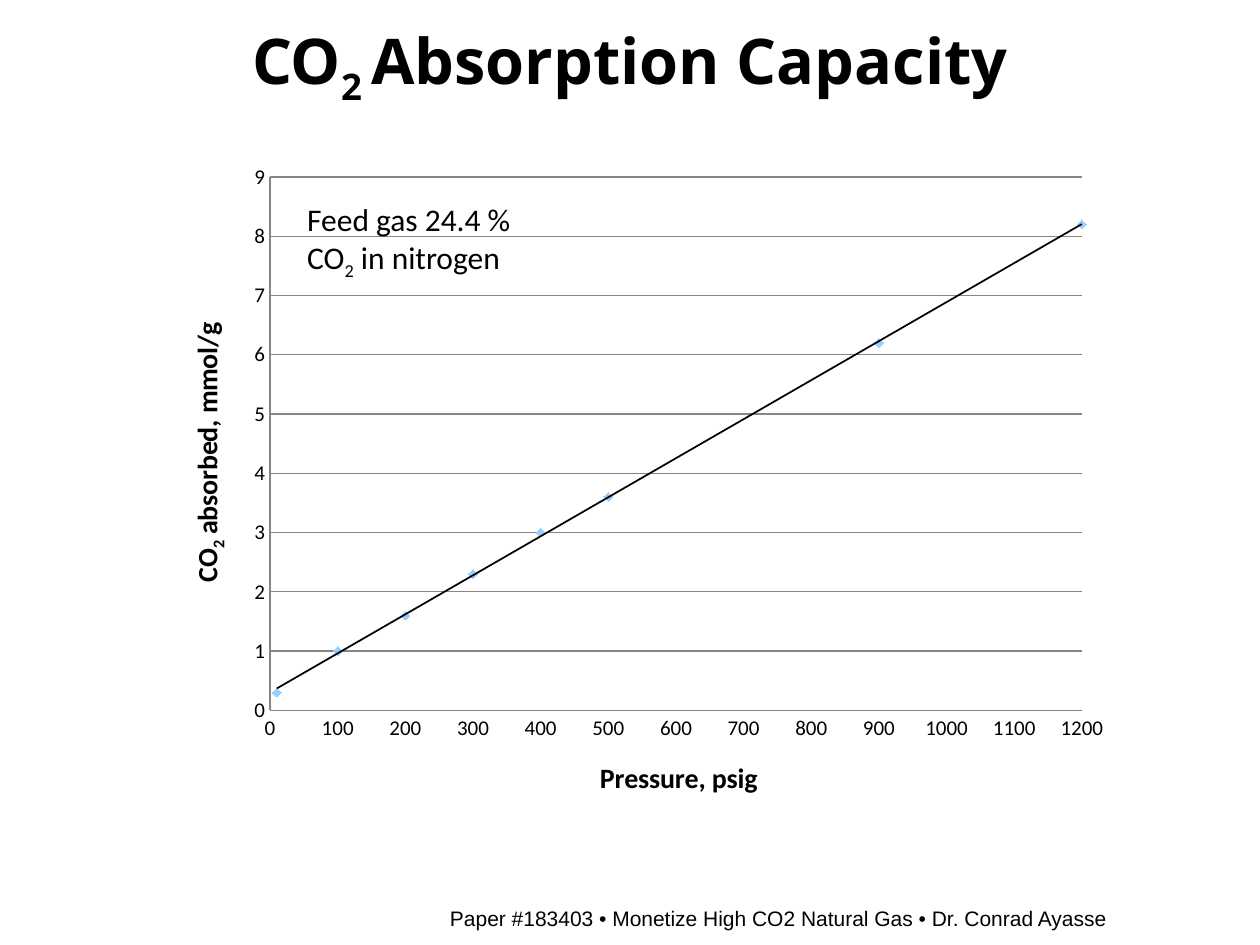
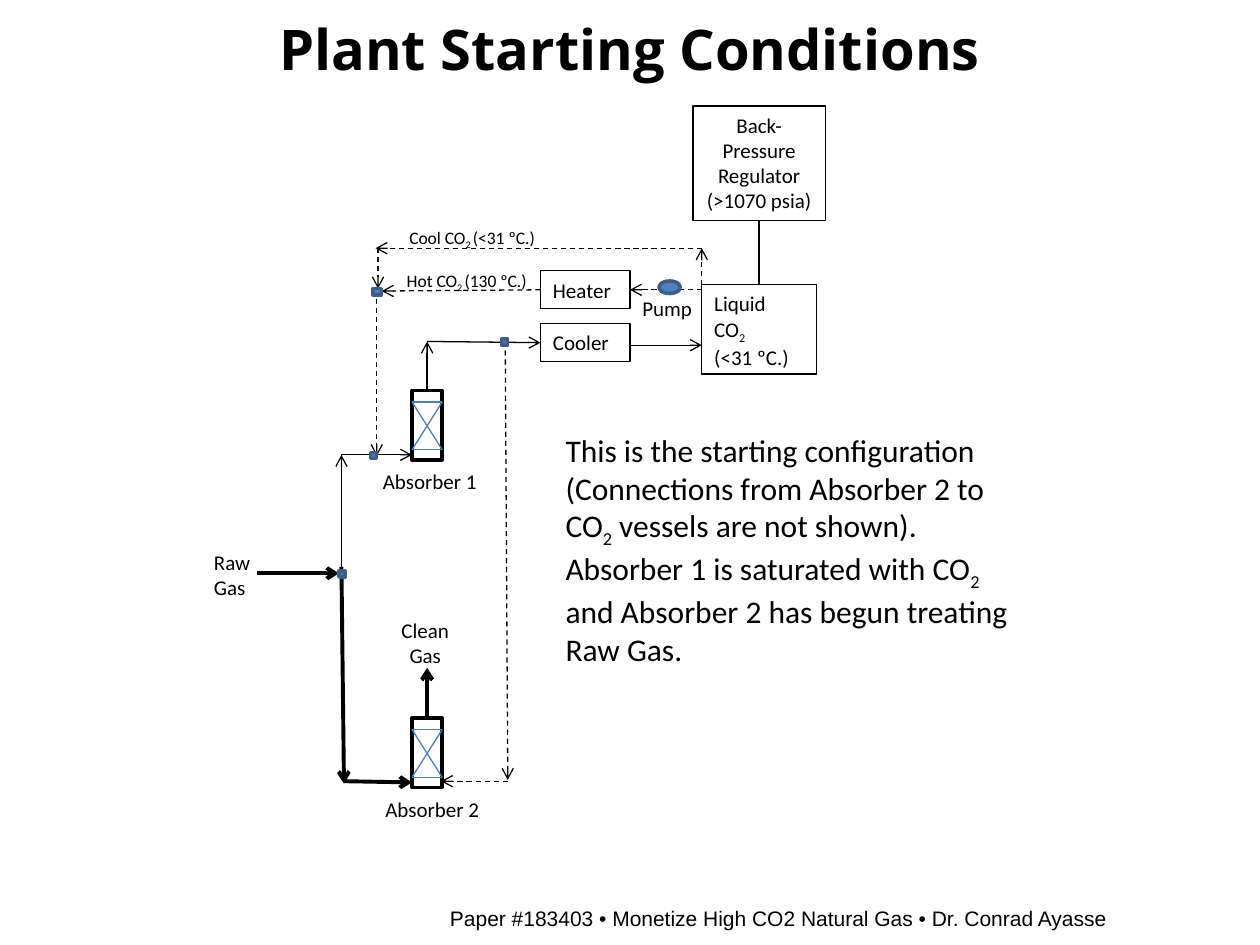
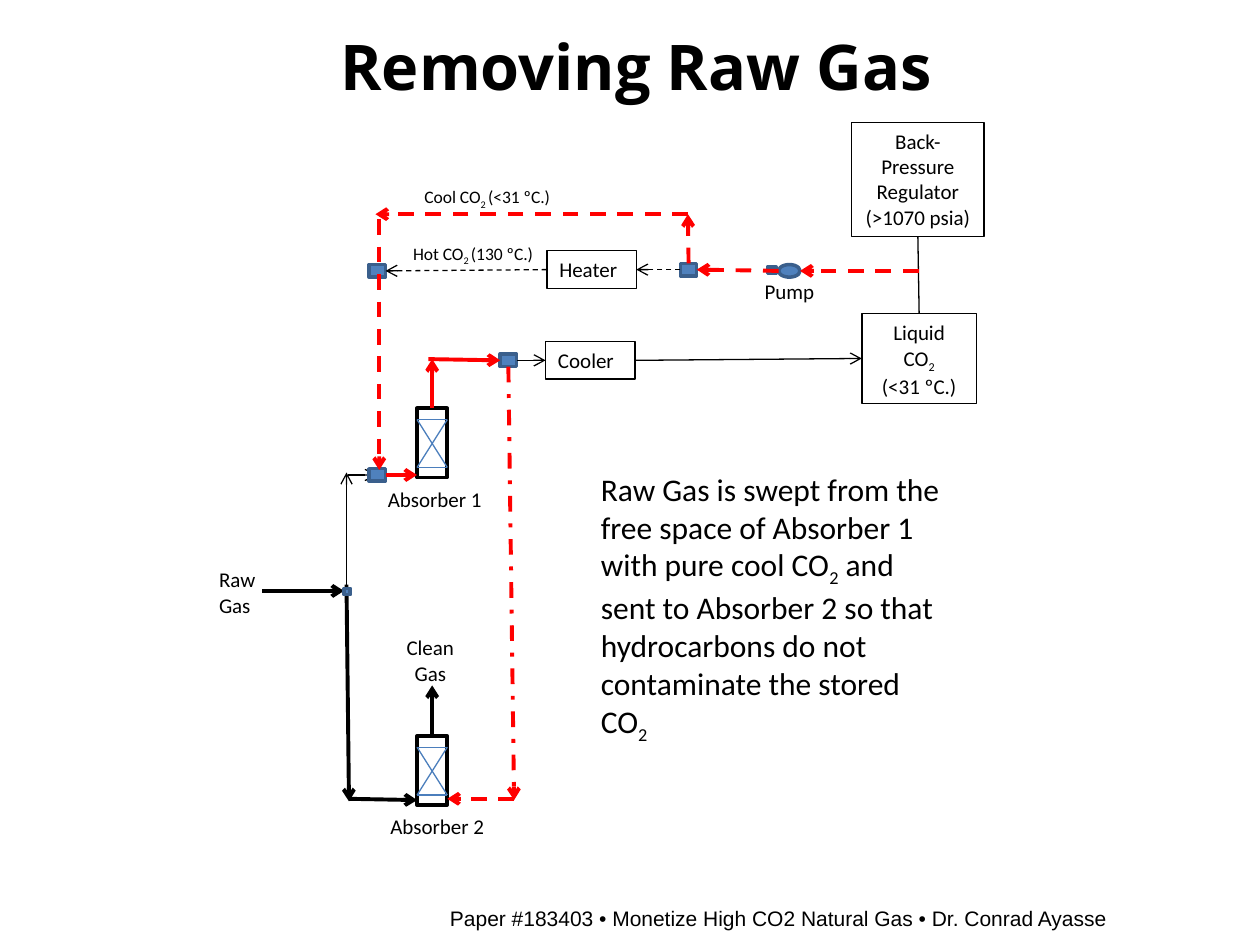
from dataclasses import dataclass

from pptx import Presentation
from pptx import util as u
from pptx.chart.data import XyChartData
from pptx.dml.color import RGBColor
from pptx.enum import chart as charts, dml, shapes, text
from pptx.oxml import parse_xml
from pptx.oxml.ns import nsdecls, qn

TOP, LEFT, BOTTOM, RIGHT = range(4)
LEFT_ALIGN, CENTER = text.PP_ALIGN.LEFT, text.PP_ALIGN.CENTER
DASH, DASH_DOT = dml.MSO_LINE.DASH, dml.MSO_LINE.DASH_DOT
RECT, OVAL = shapes.MSO_SHAPE.RECTANGLE, shapes.MSO_SHAPE.OVAL


@dataclass(frozen=True)
class Theme:
    ink: str = "000000"
    flow: str = "FF0000"
    packing: str = "4B7EBC"
    valve: str = "4F81BD"
    valve_edge: str = "3A5F8C"
    marker: str = "99CCFF"
    grid: str = "868686"
    head_font: str = "Open Sans"
    body_font: str = "Calibri"
    foot_font: str = "Arial"
    title: int = 36
    long_title: int = 32
    body: int = 18
    axis_title: int = 16
    label: int = 12
    small: int = 10
    thin: float = 0.75
    frame: float = 2
    thick: float = 2.25


THEME = Theme()
FOOTER = "Paper #183403 • Monetize High CO2 Natural Gas • Dr. Conrad Ayasse"


def color(code):
    return RGBColor.from_string(code)


class Sheet:
    """Holds the style and the current slide."""

    def __init__(self, deck, theme):
        self.deck, self.theme, self.page = deck, theme, None

    def new_page(self, title, size=None, at=(0, 0.16, 10, 0.71)):
        self.page = self.deck.slides.add_slide(self.deck.slide_layouts[6])
        self.label(FOOTER, (2.47, 7.14, 7.42, 0.25), align=CENTER,
                   font=self.theme.foot_font)
        box = self.label(title, at, size or self.theme.title, CENTER,
                         self.theme.head_font, bold=True)
        box.text_frame.vertical_anchor = text.MSO_ANCHOR.MIDDLE

    def set_text(self, frame, words, size=None, align=LEFT_ALIGN, font=None, bold=False):
        """Fill a frame; parts between tildes are subscripts."""
        for number, row in enumerate(words.split("\n")):
            para = frame.add_paragraph() if number else frame.paragraphs[0]
            para.alignment = align
            for index, part in enumerate(row.split("~")):
                if not part:
                    continue
                span = para.add_run()
                span.text = part
                span.font.size = u.Pt(size or self.theme.label)
                span.font.name = font or self.theme.body_font
                span.font.bold = bold
                span.font.color.rgb = color(self.theme.ink)
                if index % 2:
                    span._r.get_or_add_rPr().set("baseline", "-25000")

    def label(self, words, at, size=None, align=LEFT_ALIGN, font=None, bold=False):
        box = self.page.shapes.add_textbox(*map(u.Inches, at))
        box.text_frame.word_wrap = True
        self.set_text(box.text_frame, words, size, align, font, bold)
        return box

    def box(self, at, words="", align=LEFT_ALIGN, kind=RECT, fill=None,
            edge=None, width=None):
        shape = self.page.shapes.add_shape(kind, *map(u.Inches, at))
        shape.shadow.inherit = False
        if fill:
            shape.fill.solid()
            shape.fill.fore_color.rgb = color(fill)
        else:
            shape.fill.background()
        shape.line.color.rgb = color(edge or self.theme.ink)
        shape.line.width = u.Pt(width or self.theme.thin)
        if words:
            shape.text_frame.word_wrap = True
            shape.text_frame.vertical_anchor = text.MSO_ANCHOR.TOP
            self.set_text(shape.text_frame, words, align=align)
        return shape

    def valve(self, x, y, w=0.05, h=0.05, kind=RECT):
        return self.box((x, y, w, h), kind=kind, fill=self.theme.valve,
                        edge=self.theme.valve_edge, width=self.theme.frame)

    def line(self, start, end, ink=None, width=None, dash=None, arrow=True):
        """Draw a line; an end is a point or a pair (shape, side)."""
        joined = [not isinstance(tip[0], (int, float)) for tip in (start, end)]
        points = [(0, 0) if join else tip for join, tip in zip(joined, (start, end))]
        line = self.page.shapes.add_connector(
            shapes.MSO_CONNECTOR.STRAIGHT,
            *[u.Inches(value) for point in points for value in point])
        if joined[0]:
            line.begin_connect(*start)
        if joined[1]:
            line.end_connect(*end)
        line.line.color.rgb = color(ink or self.theme.ink)
        line.line.width = u.Pt(width or self.theme.thin)
        if dash:
            line.line.dash_style = dash
        if arrow:
            line.line._get_or_add_ln().append(
                parse_xml(f'<a:tailEnd {nsdecls("a")} type="arrow"/>'))
        line._element.spPr.append(parse_xml(f'<a:effectLst {nsdecls("a")}/>'))

    def flow(self, start, end, dash=None):
        self.line(start, end, self.theme.flow, self.theme.thick, dash)

    def scatter(self, at, points, x_title, y_title):
        data = XyChartData()
        series = data.add_series("Series 1")
        for x, y in points:
            series.add_data_point(x, y)
        chart = self.page.shapes.add_chart(
            charts.XL_CHART_TYPE.XY_SCATTER, *map(u.Inches, at), data).chart
        chart.has_legend = chart.has_title = False
        chart.font.name, chart.font.size = self.theme.body_font, u.Pt(self.theme.label)
        chart.font.color.rgb = color(self.theme.ink)
        plot = chart.plots[0]
        plot.vary_by_categories = False

        # Axes
        for axis, title, top, step, grid in (
                (chart.category_axis, x_title, 1200, 100, False),
                (chart.value_axis, y_title, 9, 1, True)):
            axis.minimum_scale, axis.maximum_scale, axis.major_unit = 0, top, step
            axis.major_tick_mark = axis.minor_tick_mark = charts.XL_TICK_MARK.NONE
            axis.tick_labels.number_format = "General"
            axis.tick_labels.number_format_is_linked = False
            axis.has_major_gridlines = grid
            axis.format.line.color.rgb = color(self.theme.grid)
            self.set_text(axis.axis_title.text_frame, title, self.theme.axis_title,
                          CENTER, bold=True)
        chart.value_axis.major_gridlines.format.line.color.rgb = color(self.theme.grid)
        turned = chart.value_axis.axis_title.text_frame._txBody.bodyPr
        turned.set("rot", "-5400000")
        turned.set("vert", "horz")

        # Markers and trend line
        dots = plot.series[0]
        dots.format.line.fill.background()
        dots.marker.style, dots.marker.size = charts.XL_MARKER_STYLE.DIAMOND, 5
        dots.marker.format.fill.solid()
        dots.marker.format.fill.fore_color.rgb = color(self.theme.marker)
        dots.marker.format.line.color.rgb = color(self.theme.marker)
        dots._element.find(qn("c:xVal")).addprevious(parse_xml(
            f'<c:trendline {nsdecls("c", "a")}><c:spPr><a:ln w="12700"><a:solidFill>'
            f'<a:srgbClr val="{self.theme.ink}"/></a:solidFill></a:ln></c:spPr>'
            '<c:trendlineType val="linear"/><c:dispRSqr val="0"/>'
            '<c:dispEq val="0"/></c:trendline>'))

        # Inner plot area
        area = chart._chartSpace.chart.plotArea
        for old in area.findall(qn("c:layout")):
            area.remove(old)
        spots = "".join(f'<c:{key} val="{value}"/>' for key, value in (
            ("layoutTarget", "inner"), ("xMode", "edge"), ("yMode", "edge"),
            ("x", 0.11), ("y", 0.04), ("w", 0.85), ("h", 0.79)))
        area.insert(0, parse_xml(f'<c:layout {nsdecls("c")}><c:manualLayout>{spots}'
                                 '</c:manualLayout></c:layout>'))

    def absorber(self, x, y):
        right, upper, lower = x + 0.24, y + 0.09, y + 0.47
        frame = self.box((x, y, 0.24, 0.55), width=self.theme.frame)
        for left_y, right_y in ((upper, upper), (lower, lower),
                                (upper, lower), (lower, upper)):
            self.line((x, left_y), (right, right_y), self.theme.packing, arrow=False)
        return frame

    def plant(self, x, y, heater, regulator, liquid, cool, hot, align=LEFT_ALIGN):
        """Draw the equipment around absorber 1, whose corner is at x, y."""
        thick = self.theme.thick
        first, second = self.absorber(x, y), self.absorber(x, y + 2.6)
        self.label("Absorber 1", (x - 0.33, y + 0.57, 1.04, 0.3))
        self.label("Absorber 2", (x - 0.31, y + 3.17, 1.04, 0.3))
        self.label("Raw Gas", (x - 1.67, y + 1.21, 0.6, 0.5))
        self.label("Clean\nGas", (x - 0.24, y + 1.75, 0.69, 0.5), align=CENTER)

        # Raw gas feed and clean gas outlet
        self.line((x - 0.56, y + 1.45), (x - 0.56, y + 0.51))
        self.line((x - 0.56, y + 1.4), (x - 0.54, y + 3.12), width=thick)
        self.line((x - 0.54, y + 3.1), (x, y + 3.11), width=thick)
        self.line((x - 1.23, y + 1.45), (x - 0.58, y + 1.45), width=thick)
        self.line((second, TOP), (x + 0.12, y + 2.2), width=thick)
        self.valve(x - 0.58, y + 1.43)

        # Heater, cooler and carbon dioxide storage
        cooler = self.box((x + 1.02, y - 0.53, 0.71, 0.3), "Cooler")
        heater = self.box((*heater, 0.71, 0.3), "Heater")
        regulator = self.box((*regulator, 1.05, 0.91),
                             "Back-\nPressure\nRegulator (>1070 psia)", CENTER)
        liquid = self.box((*liquid, 0.91, 0.71), "Liquid\nCO~2~\n(<31 ºC.)", align)
        self.line((regulator, BOTTOM), (liquid, TOP), arrow=False)
        self.label("Cool CO~2 ~(<31 ºC.)", (*cool, 1.36, 0.27), self.theme.small)
        self.label("Hot CO~2 ~(130 ºC.)", (*hot, 1.26, 0.27), self.theme.small)
        return first, heater, cooler, liquid


def capacity_page(sheet):
    sheet.new_page("CO~2 ~Absorption Capacity")
    sheet.scatter((1.31, 1.19, 7.58, 5.36),
                  [(10, 0.3), (100, 1), (200, 1.6), (300, 2.3),
                   (400, 3), (500, 3.6), (900, 6.2), (1200, 8.2)],
                  "Pressure, psig", "CO~2~ absorbed, mmol/g")
    sheet.label("Feed gas 24.4 % CO~2~ in nitrogen", (2.34, 1.54, 2.07, 0.71),
                sheet.theme.body)


def starting_page(sheet):
    sheet.new_page("Plant Starting Conditions", sheet.theme.long_title,
                   (0, 0.06, 10, 0.64))
    absorber, heater, cooler, _ = sheet.plant(
        3.27, 3.1, heater=(4.29, 2.15), regulator=(5.5, 0.84), liquid=(5.57, 2.26),
        cool=(3.15, 1.75), hot=(3.13, 2.09))

    # Gas through absorber 1 to storage
    sheet.line((2.71, 3.61), (3.27, 3.61))
    sheet.line((absorber, TOP), (3.39, 2.71))
    sheet.line((3.39, 2.71), (cooler, LEFT))
    sheet.line((5, 2.74), (5.57, 2.74))

    # Idle lines
    for start, end in (((4.01, 2.71), (4.03, 6.19)), ((4.03, 6.2), (3.5, 6.2)),
                       ((2.99, 2.3), (2.99, 3.62)), ((5.57, 2.3), (heater, RIGHT)),
                       ((heater, LEFT), (3.03, 2.31)), ((5.57, 2.26), (5.57, 1.97)),
                       ((5.57, 1.97), (2.98, 1.97)), ((3, 1.97), (3, 2.29))):
        sheet.line(start, end, dash=DASH)

    # Valves and pump
    sheet.valve(3.98, 2.69)
    sheet.valve(2.94, 3.59)
    sheet.valve(2.96, 2.29, 0.07)
    sheet.valve(5.23, 2.23, 0.17, 0.1, OVAL)
    sheet.label("Pump", (5, 2.3, 0.83, 0.3))
    sheet.label("This is the starting configuration (Connections from Absorber 2 to "
                "CO~2~ vessels are not shown).\nAbsorber 1 is saturated with CO~2~ "
                "and Absorber 2 has begun treating Raw Gas.",
                (4.39, 3.37, 3.8, 1.92), sheet.theme.body)


def removing_page(sheet):
    sheet.new_page("Removing Raw Gas", at=(0.05, 0.16, 10, 0.71))
    absorber, heater, cooler, liquid = sheet.plant(
        3.31, 3.24, heater=(4.34, 1.99), regulator=(6.76, 0.97), liquid=(6.84, 2.49),
        cool=(3.27, 1.43), hot=(3.18, 1.88), align=CENTER)

    # Valves and pump
    sheet.line((2.76, 3.77), (2.99, 3.77))
    sheet.valve(2.98, 3.73)
    recycle, outlet, mixer, inlet = [
        sheet.valve(x, y, 0.13, 0.1)
        for x, y in ((5.4, 2.09), (3.97, 2.81), (2.93, 2.1), (2.93, 3.72))]
    sheet.valve(6.18, 2.1, 0.17, 0.1, OVAL)
    sheet.valve(6.09, 2.12, 0.07)
    sheet.label("Pump", (5.97, 2.16, 0.63, 0.3))

    # Idle lines
    sheet.line((recycle, LEFT), (heater, RIGHT), dash=DASH)
    sheet.line((heater, LEFT), (mixer, RIGHT), dash=DASH)
    sheet.line((outlet, RIGHT), (cooler, LEFT))
    sheet.line((cooler, RIGHT), (liquid, LEFT))

    # Cool carbon dioxide sweep
    sheet.flow((7.29, 2.15), (6.35, 2.15), DASH)
    sheet.flow((6.18, 2.15), (recycle, RIGHT), DASH)
    sheet.flow((recycle, TOP), (5.46, 1.7), DASH)
    sheet.flow((5.46, 1.7), (2.98, 1.7), DASH)
    sheet.flow((3.01, 1.74), (3.01, 3.73), DASH)
    sheet.flow((inlet, RIGHT), (3.31, 3.77))
    sheet.flow((absorber, TOP), (3.43, 2.85))
    sheet.flow((3.4, 2.85), (outlet, LEFT))
    sheet.line((outlet, BOTTOM), (4.08, 6.35), sheet.theme.flow,
               sheet.theme.thick, DASH_DOT)
    sheet.flow((4.08, 6.34), (3.55, 6.34), DASH)
    sheet.label("Raw Gas is swept from the free space of Absorber 1 with pure cool "
                "CO~2~ and sent to Absorber 2 so that hydrocarbons do not "
                "contaminate the stored CO~2~", (4.67, 3.68, 2.98, 2.22),
                sheet.theme.body)


def main():
    deck = Presentation()
    deck.slide_width, deck.slide_height = u.Inches(10), u.Inches(7.5)
    sheet = Sheet(deck, THEME)
    for build in (capacity_page, starting_page, removing_page):
        build(sheet)
    deck.save("out.pptx")


if __name__ == "__main__":
    main()
